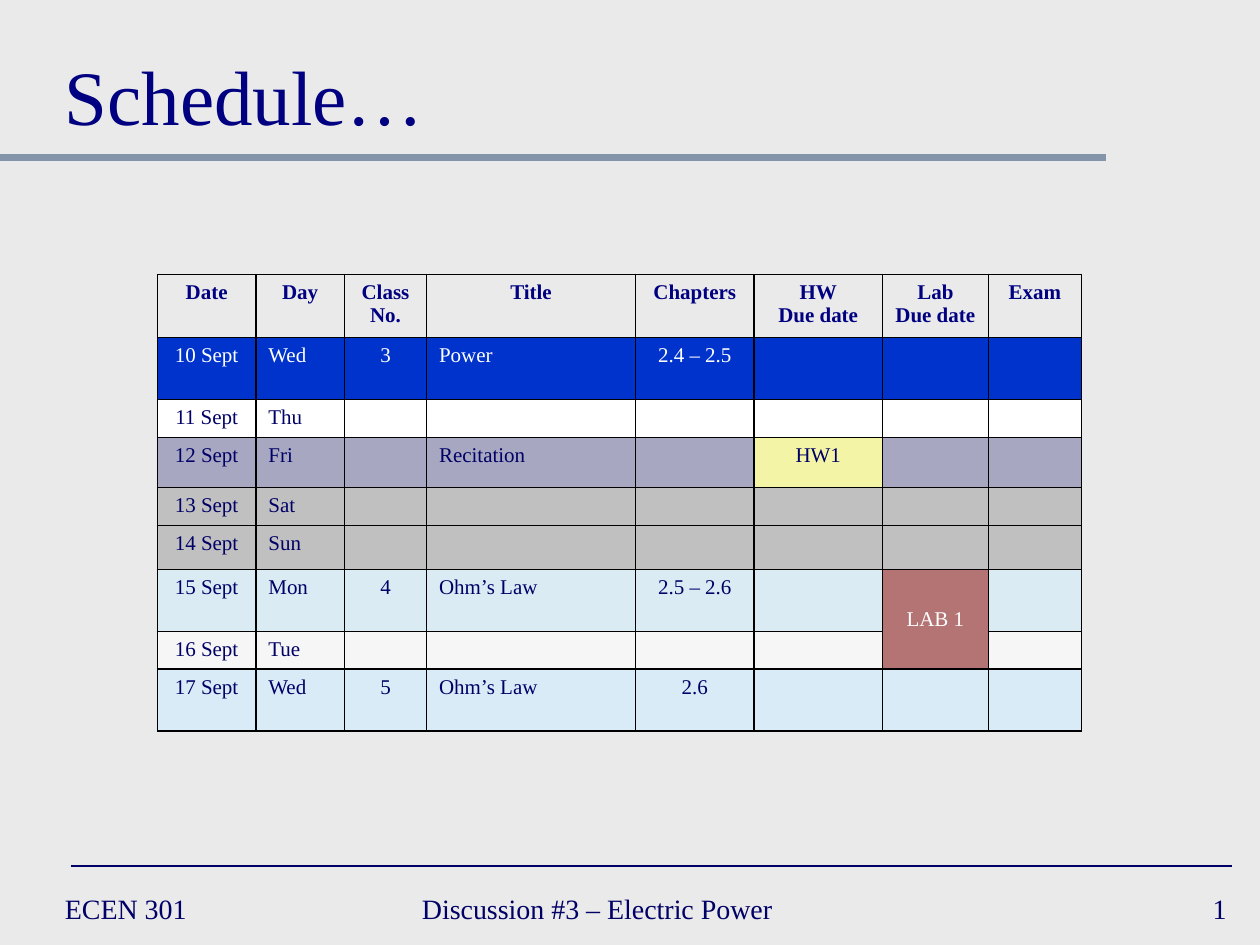
import pptx
import pptx.dml.color
import pptx.enum.shapes
import pptx.enum.text
import pptx.oxml
import pptx.oxml.ns
import pptx.util
from lxml import etree

RGB = pptx.dml.color.RGBColor
ALIGN = pptx.enum.text.PP_ALIGN
ANCHOR = pptx.enum.text.MSO_ANCHOR

BACKGROUND = RGB(0xEA, 0xEA, 0xEA)
NAVY = RGB(0x00, 0x00, 0x66)
TITLE_NAVY = RGB(0x00, 0x00, 0x80)
SLATE = RGB(0x84, 0x95, 0xA9)
WHITE = RGB(0xFF, 0xFF, 0xFF)
BLACK = RGB(0x00, 0x00, 0x00)
ROYAL = RGB(0x00, 0x33, 0xCC)
VIOLET = RGB(0x66, 0x66, 0x99)
YELLOW = RGB(0xFF, 0xFF, 0x66)
SILVER = RGB(0xC0, 0xC0, 0xC0)
SKY = RGB(0xCC, 0xEC, 0xFF)
MAROON = RGB(0x80, 0x00, 0x00)

FONT = "Times New Roman"
COLUMN_WIDTHS = [9.36, 8.46, 7.8, 19.92, 11.28, 12.24, 10.08, 8.88]
ROW_HEIGHTS = [5.88, 5.88, 3.6, 4.8, 3.6, 4.2, 5.88, 3.12, 5.88]
LEFT_COLUMNS = {1, 3}

HEADER = ["Date", "Day", "Class\nNo.", "Title", "Chapters",
          "HW\nDue date", "Lab\nDue date", "Exam"]
# Each day: texts, (fill colour, opacity in percent), text colour.
DAYS = [
    (["10 Sept", "Wed", "3", "Power", "2.4 – 2.5"], (ROYAL, 100), WHITE),
    (["11 Sept", "Thu"], (WHITE, 100), NAVY),
    (["12 Sept", "Fri", "", "Recitation", "", "HW1"], (VIOLET, 50), NAVY),
    (["13 Sept", "Sat"], (SILVER, 100), NAVY),
    (["14 Sept", "Sun"], (SILVER, 100), NAVY),
    (["15 Sept", "Mon", "4", "Ohm’s Law", "2.5 – 2.6"], (SKY, 50), NAVY),
    (["16 Sept", "Tue"], (WHITE, 60), NAVY),
    (["17 Sept", "Wed", "5", "Ohm’s Law", "2.6"], (SKY, 60), NAVY),
]
HOMEWORK_CELL = (3, 5)
LAB_ROW, LAB_COLUMN = 6, 6


class SlideBuilder:
    """Places elements on a grid of 120 columns by 90 rows."""

    def __init__(self, presentation):
        self.column = presentation.slide_width / 120
        self.row = presentation.slide_height / 90
        self.slide = presentation.slides.add_slide(presentation.slide_layouts[6])
        self.slide.background.fill.solid()
        self.slide.background.fill.fore_color.rgb = BACKGROUND

    def across(self, columns):
        return round(columns * self.column)

    def down(self, rows):
        return round(rows * self.row)

    def box(self, left, top, width, height):
        return self.across(left), self.down(top), self.across(width), self.down(height)

    def line(self, start, end, row, color, width):
        connector = self.slide.shapes.add_connector(
            pptx.enum.shapes.MSO_CONNECTOR.STRAIGHT,
            self.across(start), self.down(row), self.across(end), self.down(row))
        connector.line.color.rgb = color
        connector.line.width = pptx.util.Pt(width)
        etree.SubElement(connector._element.spPr, pptx.oxml.ns.qn("a:effectLst"))

    def paragraphs(self, frame, text, size, color, alignment=ALIGN.LEFT, bold=False):
        formats = {"name": FONT, "size": pptx.util.Pt(size), "bold": bold}
        for index, words in enumerate(text.split("\n")):
            paragraph = frame.paragraphs[0] if index == 0 else frame.add_paragraph()
            paragraph.alignment = alignment
            if not words:
                # The end mark's size keeps the row of an empty cell low.
                etree.SubElement(paragraph._p, pptx.oxml.ns.qn("a:endParaRPr"),
                                 sz=str(size * 100))
                continue
            run = paragraph.add_run()
            run.text = words
            for name, value in formats.items():
                setattr(run.font, name, value)
            run.font.color.rgb = color

    def text(self, box, text, size, color, alignment=ALIGN.LEFT, anchor=ANCHOR.MIDDLE):
        frame = self.slide.shapes.add_textbox(*self.box(*box)).text_frame
        frame.word_wrap = True
        frame.vertical_anchor = anchor
        self.paragraphs(frame, text, size, color, alignment)

    def table(self, left, top, widths, heights):
        table = self.slide.shapes.add_table(
            len(heights), len(widths),
            *self.box(left, top, sum(widths), sum(heights))).table
        table.first_row = table.horz_banding = False
        for column, width in zip(table.columns, widths):
            column.width = self.across(width)
        for row, height in zip(table.rows, heights):
            row.height = self.down(height)
        return table

    def cell(self, cell, text, fill, color, alignment, bold=False):
        self.paragraphs(cell.text_frame, text, 12, color, alignment, bold)
        properties = cell._tc.get_or_add_tcPr()
        for side in ("lnL", "lnR", "lnT", "lnB"):
            properties.append(pptx.oxml.parse_xml(
                f'<a:{side} {pptx.oxml.ns.nsdecls("a")} w="12700"><a:solidFill>'
                f'<a:srgbClr val="{BLACK}"/></a:solidFill></a:{side}>'))
        if fill is None:
            cell.fill.background()
            return
        fill_color, opacity = fill
        cell.fill.solid()
        cell.fill.fore_color.rgb = fill_color
        if opacity < 100:
            solid = properties.find(pptx.oxml.ns.qn("a:solidFill"))
            etree.SubElement(solid[0], pptx.oxml.ns.qn("a:alpha"), val=str(opacity * 1000))


def add_schedule(builder):
    table = builder.table(15, 26.16, COLUMN_WIDTHS, ROW_HEIGHTS)
    for column, text in enumerate(HEADER):
        builder.cell(table.cell(0, column), text, None, TITLE_NAVY, ALIGN.CENTER, True)

    for row, (texts, day_fill, day_color) in enumerate(DAYS, start=1):
        for column in range(len(COLUMN_WIDTHS)):
            text = texts[column] if column < len(texts) else ""
            fill, color = day_fill, day_color
            if (row, column) == HOMEWORK_CELL:
                fill = (YELLOW, 50)
            elif column == LAB_COLUMN and row in (LAB_ROW, LAB_ROW + 1):
                fill, color = (MAROON, 50), WHITE
                text = "LAB 1" if row == LAB_ROW else ""
            alignment = ALIGN.LEFT if column in LEFT_COLUMNS else ALIGN.CENTER
            builder.cell(table.cell(row, column), text, fill, color, alignment)

    lab = table.cell(LAB_ROW, LAB_COLUMN)
    lab.merge(table.cell(LAB_ROW + 1, LAB_COLUMN))
    lab.vertical_anchor = ANCHOR.MIDDLE


def main():
    presentation = pptx.Presentation()
    presentation.slide_width = pptx.util.Inches(10)
    presentation.slide_height = pptx.util.Inches(7.5)
    builder = SlideBuilder(presentation)

    builder.line(0, 105.36, 15, SLATE, 4)
    builder.line(6.72, 117.36, 82.5, NAVY, 1)
    builder.text((5, 84, 26, 5), "ECEN 301", 16, NAVY)
    builder.text((39, 84, 46, 5), "Discussion #3 – Electric Power", 16, NAVY)
    builder.text((93, 84, 25, 5), "1", 16, NAVY, ALIGN.RIGHT)
    add_schedule(builder)
    builder.text((5, 2, 111, 12), "Schedule…", 44, TITLE_NAVY, anchor=ANCHOR.BOTTOM)

    presentation.save("out.pptx")


if __name__ == "__main__":
    main()
